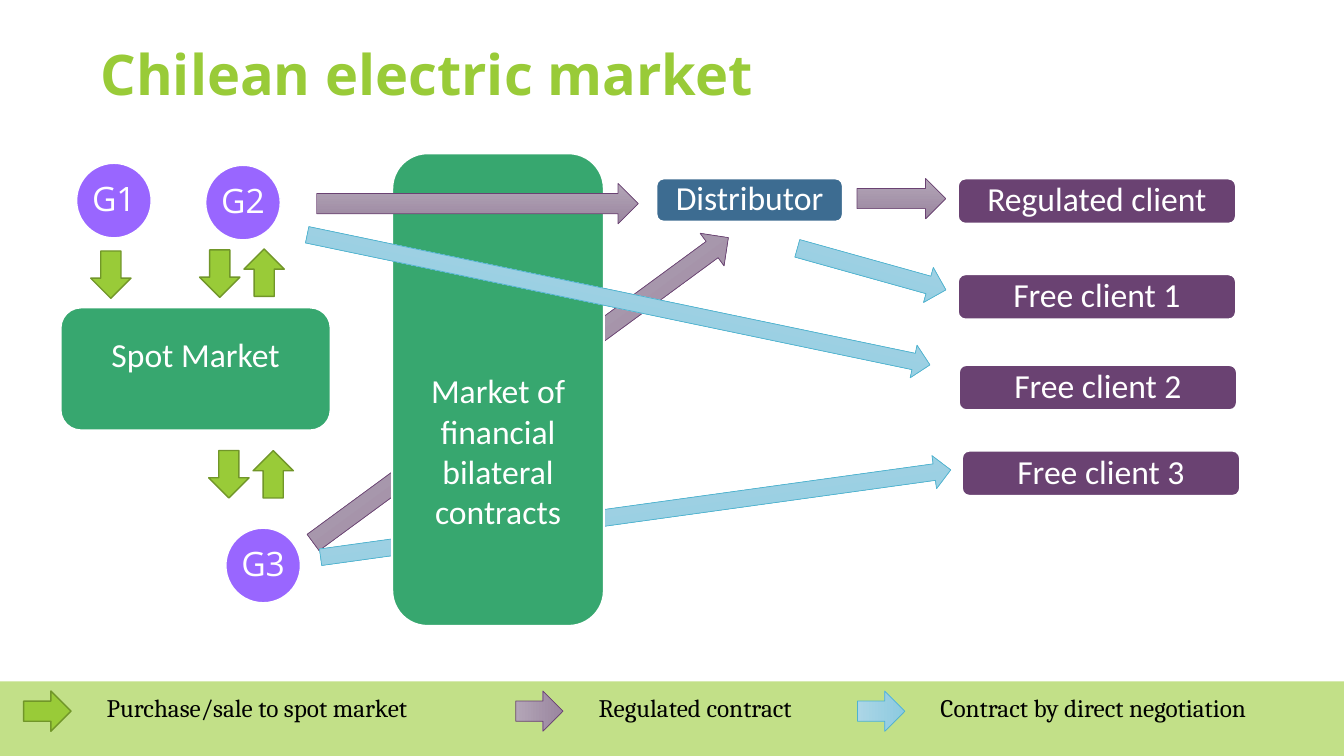
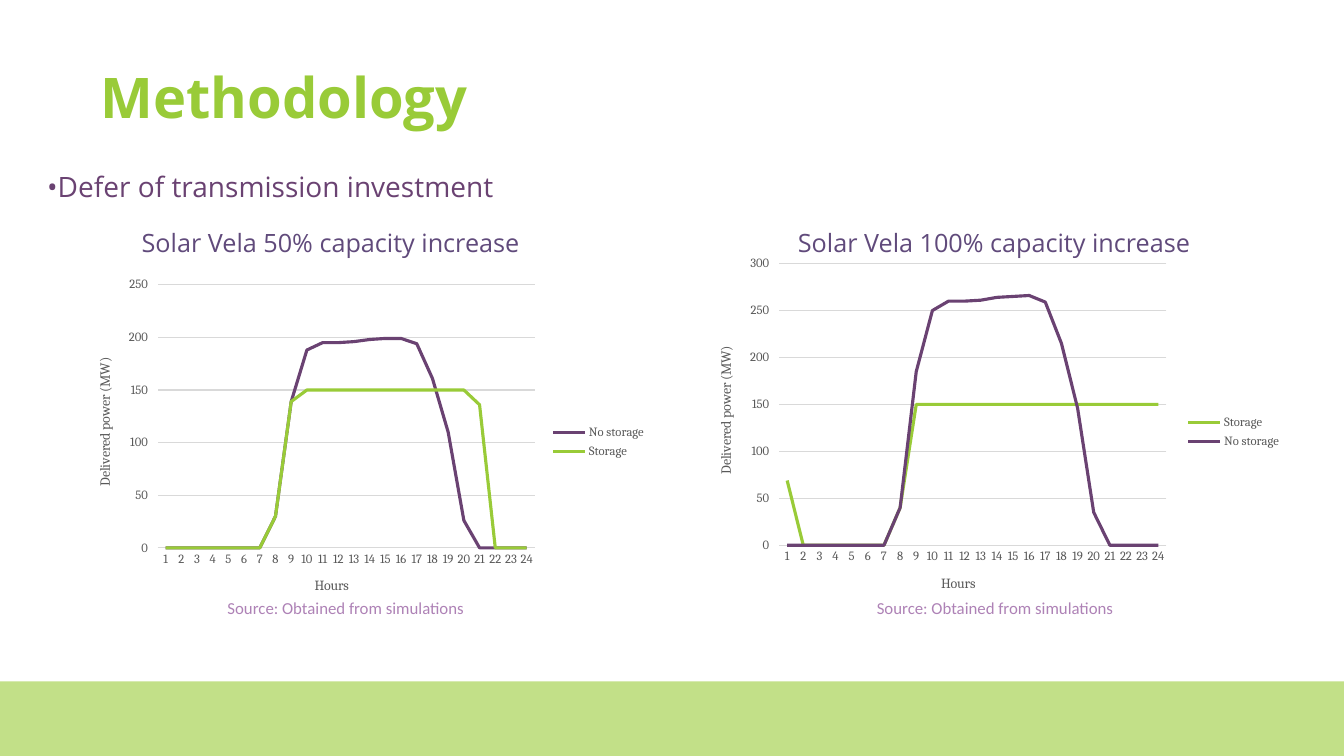
from lxml import etree
from pptx import Presentation
from pptx.chart.data import CategoryChartData
from pptx.dml.color import RGBColor
from pptx.enum.chart import XL_CHART_TYPE, XL_LEGEND_POSITION, XL_TICK_MARK
from pptx.enum.shapes import MSO_SHAPE
from pptx.enum.text import MSO_ANCHOR, PP_ALIGN
from pptx.oxml import parse_xml
from pptx.oxml.ns import nsdecls, qn
from pptx.util import Inches, Pt

WHITE, BLACK, GREY, GRID = "FFFFFF", "000000", "595959", "D9D9D9"
LIME, BAND, GREEN, BLUE = "99CB38", "C2E088", "37A76F", "3D6C91"
PURPLE, VIOLET, HEADING, SOURCE = "6A4272", "9966FF", "604A7B", "AE82B6"
SPOT = ((LIME,), "719629", 1)
REGULATED = (("B3A5B7", "9A869F"), PURPLE, 0.5)
DIRECT = (("ACD6E6", "8CCAE0"), "4EB3CF", 0.5)
ARROW_W, ARROW_H = 0.4, 0.47


def rgb(value):
    """Turn a hex string into a colour."""
    return RGBColor.from_string(value)


def style_font(font, name, size, color, bold=False):
    """Set the face, size and colour of a font."""
    font.name, font.size, font.bold = name, Pt(size), bold
    font.color.rgb = rgb(color)


def write(shape, text, name, size, color, align=PP_ALIGN.CENTER,
          anchor=MSO_ANCHOR.MIDDLE, bold=False, spacing=None, before=None):
    """Write one paragraph into a shape and return the paragraph."""
    tf = shape.text_frame
    tf.word_wrap, tf.vertical_anchor = True, anchor
    p = tf.paragraphs[0]
    p.alignment, p.line_spacing = align, spacing
    if before:
        p.space_before = Pt(before)
    r = p.add_run()
    r.text = text
    style_font(r.font, name, size, color, bold)
    return p


def add_text(s, box, text, name, size, color, **options):
    """Add a text box."""
    sp = s.shapes.add_textbox(*map(Inches, box))
    options = {"align": PP_ALIGN.LEFT, "anchor": MSO_ANCHOR.TOP, **options}
    return write(sp, text, name, size, color, **options)


def add_box(s, kind, box, colors, line=None, width=1.5, rotation=0):
    """Add a preset shape with a plain or two-colour fill."""
    sp = s.shapes.add_shape(kind, *map(Inches, box))
    sp.shadow.inherit = False
    sp.rotation = rotation
    if len(colors) == 1:
        sp.fill.solid()
        sp.fill.fore_color.rgb = rgb(colors[0])
    else:
        sp.fill.gradient()
        sp.fill.gradient_angle = 270
        for stop, color in zip(sp.fill.gradient_stops, colors):
            stop.color.rgb = rgb(color)
    if line:
        sp.line.color.rgb = rgb(line)
        sp.line.width = Pt(width)
    else:
        sp.line.fill.background()
    return sp


def set_margins(sp, left, top, right, bottom):
    """Set the text insets of a shape."""
    tf = sp.text_frame
    tf.margin_left, tf.margin_top = Inches(left), Inches(top)
    tf.margin_right, tf.margin_bottom = Inches(right), Inches(bottom)


def add_base(prs, title, top):
    """Start a slide with the bottom band and the title."""
    s = prs.slides.add_slide(prs.slide_layouts[6])
    add_box(s, MSO_SHAPE.RECTANGLE, (0, 6.76, 13.33, 0.74), (BAND,))
    add_text(s, (0.9, top, 11.5, 0.83), title, "Open Sans", 40, LIME,
             anchor=MSO_ANCHOR.BOTTOM, bold=True, spacing=0.9)
    return s


def add_contracts(s, x, y, contracts):
    """Add long contract arrows, placed from the corner x, y."""
    for left, top, width, height, rotation, look in contracts:
        add_box(s, MSO_SHAPE.RIGHT_ARROW, (x + left, y + top, width, height),
                *look, rotation=rotation)


def add_bilateral_market(s, box):
    """Add the tall box of the bilateral market."""
    sp = add_box(s, MSO_SHAPE.ROUNDED_RECTANGLE, box, (GREEN,), WHITE)
    set_margins(sp, 0.1, 2.05, 0.1, 0.05)
    write(sp, "Market of financial bilateral contracts", "Calibri", 24, WHITE,
          anchor=MSO_ANCHOR.TOP)


def add_spot_market(s, x, y):
    """Add the spot market, its generators and its trade arrows."""
    sp = add_box(s, MSO_SHAPE.ROUNDED_RECTANGLE, (x, y + 1.43, 2.68, 1.22),
                 (GREEN,), WHITE)
    set_margins(sp, 0.1, 0.05, 0.1, 0.35)
    write(sp, "Spot Market", "Calibri", 24, WHITE)
    for name, left, top in (("G1", 0.16, 0), ("G2", 1.44, 0.02), ("G3", 1.64, 3.62)):
        sp = add_box(s, MSO_SHAPE.OVAL, (x + left, y + top, 0.74, 0.74),
                     (VIOLET,), WHITE, 1)
        set_margins(sp, 0.02, 0.02, 0.02, 0.02)
        write(sp, name, "Open Sans", 24, WHITE, spacing=0.9)
    for left, top, rotation in ((0.3, 0.87, 0), (1.38, 0.86, 0), (1.82, 0.85, 180),
                                (1.47, 2.85, 0), (1.91, 2.85, 180)):
        add_box(s, MSO_SHAPE.DOWN_ARROW, (x + left, y + top, ARROW_W, ARROW_H),
                *SPOT, rotation=rotation)


def add_buyers(s, x, y):
    """Add the distributor and the column of clients."""
    buyers = (("Distributor", 0, 0, 1.85, 0.43, BLUE),
              ("Regulated client", 2.99, 0, 2.76, 0.45, PURPLE),
              ("Free client 1", 2.99, 0.95, 2.76, 0.45, PURPLE),
              ("Free client 2", 3, 1.85, 2.76, 0.45, PURPLE),
              ("Free client 3", 3.03, 2.7, 2.76, 0.45, PURPLE))
    for name, left, top, width, height, color in buyers:
        sp = add_box(s, MSO_SHAPE.ROUNDED_RECTANGLE,
                     (x + left, y + top, width, height), (color,), WHITE)
        set_margins(sp, 0.07, 0.07, 0.07, 0.07)
        write(sp, name, "Calibri", 24, WHITE, spacing=0.9)


def add_key(s, x, y):
    """Add the key to the arrow colours."""
    entries = (("Purchase/sale to spot market", 0, SPOT),
               ("Regulated contract", 4.88, REGULATED),
               ("Contract by direct negotiation", 8.27, DIRECT))
    for text, left, look in entries:
        add_box(s, MSO_SHAPE.DOWN_ARROW, (x + left, y, ARROW_W, ARROW_H),
                *look, rotation=270)
        add_text(s, (x + left + 0.69, y, 3.7, 0.4), text, "Cambria", 18, BLACK)


def add_market_slide(prs):
    """Build the slide of the electric market."""
    s = add_base(prs, "Chilean electric market", 0.29)
    add_contracts(s, 2.61, 1.77, ((0, 1.9, 5.11, 0.4, 323.7, REGULATED),
                                  (0.54, 3.16, 6.31, 0.33, 352.1, DIRECT)))
    add_bilateral_market(s, (3.89, 1.52, 2.1, 4.69))
    add_spot_market(s, 0.6, 1.62)
    add_buyers(s, 6.51, 1.77)
    add_contracts(s, 2.61, 1.77, ((0.53, 0.05, 3.19, 0.4, 0, REGULATED),
                                  (5.89, 0, 0.88, 0.4, 0, REGULATED),
                                  (5.27, 0.72, 1.53, 0.36, 15.6, DIRECT),
                                  (0.37, 1.04, 6.31, 0.33, 11.8, DIRECT)))
    add_key(s, 0.27, 6.82)


def set_plot_layout(chart, **place):
    """Fix the inner plot area as fractions of the chart."""
    area = chart._chartSpace.chart.plotArea
    for old in area.findall(qn("c:layout")):
        area.remove(old)
    layout = parse_xml(f"<c:layout {nsdecls('c')}><c:manualLayout/></c:layout>")
    values = {"layoutTarget": "inner", "xMode": "edge", "yMode": "edge", **place}
    for tag, value in values.items():
        etree.SubElement(layout[0], qn(f"c:{tag}")).set("val", str(value))
    area.insert(0, layout)


def style_axis(axis, title, tick):
    """Style the labels and the title of an axis."""
    axis.major_tick_mark, axis.minor_tick_mark = tick, XL_TICK_MARK.NONE
    style_font(axis.tick_labels.font, "Cambria", 9, GREY)
    r = axis.axis_title.text_frame.paragraphs[0].add_run()
    r.text = title
    style_font(r.font, "Cambria", 10, GREY)


def add_power_chart(s, box, series, top_value):
    """Add a line chart of the power delivered in each hour."""
    data = CategoryChartData(number_format="0")
    data.categories = [str(hour) for hour in range(1, 25)]
    for name, _, values in series:
        data.add_series(name, values)
    chart = s.shapes.add_chart(XL_CHART_TYPE.LINE, *map(Inches, box), data).chart
    chart.has_title = False
    style_font(chart.font, "Cambria", 10, BLACK)
    chart.has_legend = True
    chart.legend.position = XL_LEGEND_POSITION.RIGHT
    chart.legend.include_in_layout = False
    style_font(chart.legend.font, "Cambria", 9, GREY)
    hours, power = chart.category_axis, chart.value_axis
    style_axis(hours, "Hours", XL_TICK_MARK.NONE)
    style_axis(power, "Delivered power (MW)", XL_TICK_MARK.OUTSIDE)
    power.minimum_scale, power.maximum_scale, power.major_unit = 0, top_value, 50
    power.tick_labels.number_format = "0"
    power.tick_labels.number_format_is_linked = False
    power.format.line.fill.background()
    for line in (hours.format.line, power.major_gridlines.format.line):
        line.color.rgb = rgb(GRID)
        line.width = Pt(0.75)
    plot = chart.plots[0]
    plot.vary_by_categories = False
    for item, (_, color, _) in zip(plot.series, series):
        item.smooth = False
        item.format.line.color.rgb = rgb(color)
        item.format.line.width = Pt(2.25)
    set_plot_layout(chart, x=0.14, y=0.04, w=0.65, h=0.77)


def add_case(s, x, title, chart_box, series, top_value, source_x):
    """Add a capacity case: heading, chart and source."""
    add_power_chart(s, chart_box, series, top_value)
    add_text(s, (x, 2.06, 5.76, 0.6), title, "Open Sans", 18, HEADING,
             align=PP_ALIGN.CENTER, spacing=1.5, before=13)
    add_text(s, (source_x, 5.88, 5.66, 0.3), "Source: Obtained from simulations",
             "Calibri", 12, SOURCE, align=PP_ALIGN.CENTER)


def add_methodology_slide(prs):
    """Build the slide of the two capacity cases."""
    s = add_base(prs, "Methodology", 0.52)
    p = add_text(s, (0.37, 1.47, 11.5, 0.7), "Defer of transmission investment",
                 "Open Sans", 20, PURPLE, spacing=1.5, before=13)
    pPr = p._p.get_or_add_pPr()
    pPr.set("marL", str(Inches(0.1)))
    pPr.set("indent", str(-Inches(0.1)))
    etree.SubElement(pPr, qn("a:buFont")).set("typeface", "Open Sans")
    etree.SubElement(pPr, qn("a:buChar")).set("char", "•")
    half_plain = [0] * 7 + [30, 139, 188, 195, 195, 196, 198, 199, 199, 194,
                            161, 110, 26] + [0] * 4
    half_stored = [0] * 7 + [30, 139] + [150] * 11 + [136] + [0] * 3
    full_plain = [0] * 7 + [40, 185, 250, 260, 260, 261, 264, 265, 266, 259,
                            215, 146, 35] + [0] * 4
    full_stored = [69] + [0] * 6 + [40] + [150] * 16
    add_case(s, 0.4, "Solar Vela 50% capacity increase", (0.76, 2.69, 5.75, 3.39),
             (("No storage", PURPLE, half_plain), ("Storage", LIME, half_stored)),
             250, 0.6)
    add_case(s, 6.98, "Solar Vela 100% capacity increase", (6.9, 2.47, 5.91, 3.63),
             (("Storage", LIME, full_stored), ("No storage", PURPLE, full_plain)),
             300, 7.04)


def main():
    """Build and save the presentation."""
    prs = Presentation()
    prs.slide_width, prs.slide_height = Inches(13.33), Inches(7.5)
    add_market_slide(prs)
    add_methodology_slide(prs)
    prs.save("out.pptx")


if __name__ == "__main__":
    main()
